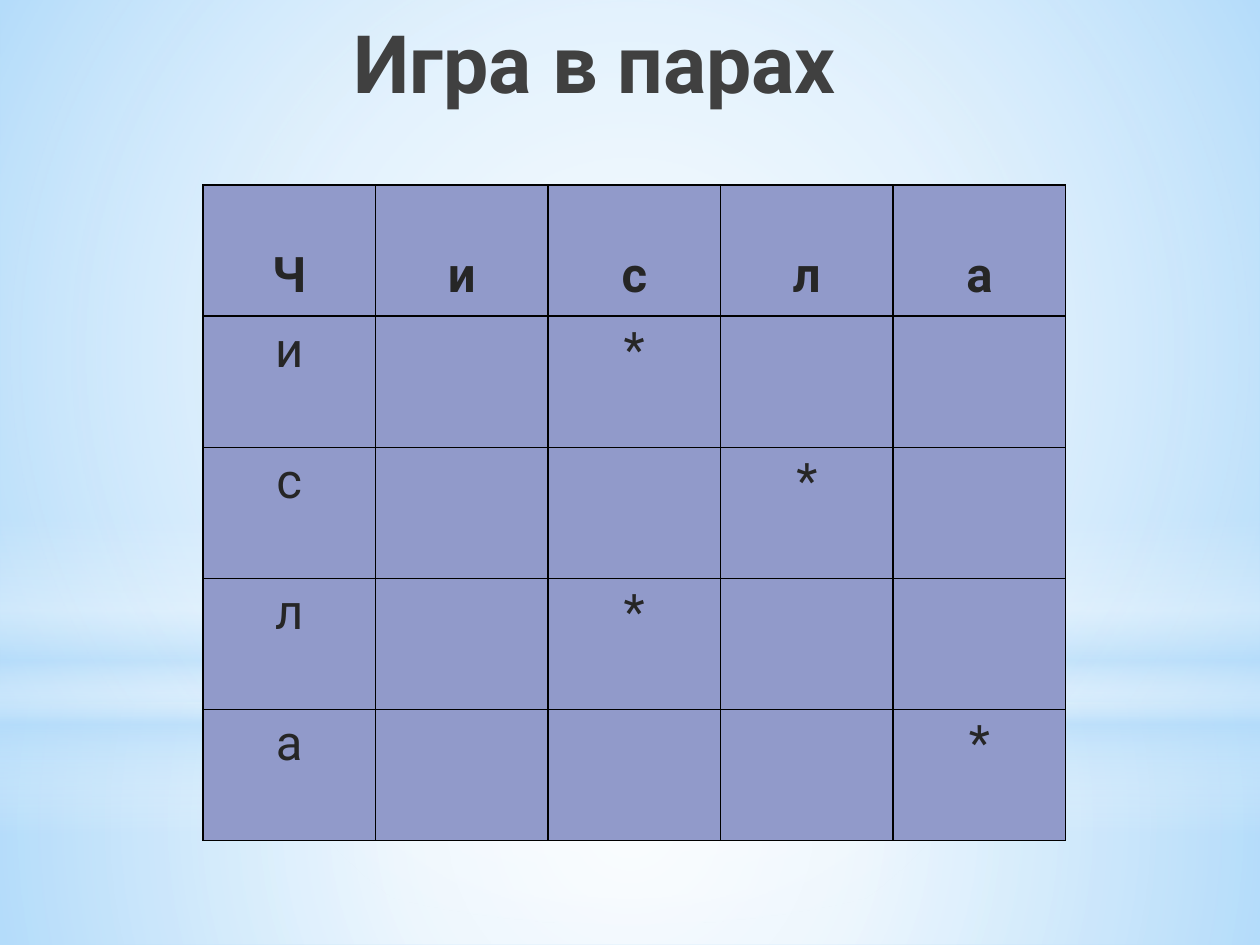
"""Build a slide with a letter grid for a game in pairs."""
from pptx import Presentation
from pptx.dml.color import RGBColor as RGB
from pptx.enum.shapes import MSO_SHAPE as Shape
from pptx.enum.text import MSO_ANCHOR as Anchor, PP_ALIGN as Align
from pptx.oxml import parse_xml
from pptx.oxml.ns import nsdecls, qn
from pptx.util import Inches, Pt

COLORS = {"sky": "B4DCFA", "white": "FFFFFF", "title": "404040",
          "text": "262626", "cell": "919ACA", "edge": "000000"}
WORD = "Числа"
STARS = {(1, 2), (2, 3), (3, 2), (4, 4)}
ROUND = ('<a:path path="circle"><a:fillToRect l="50000" t="50000" '
         'r="50000" b="50000"/></a:path>')
DOWN = '<a:lin ang="5400000" scaled="0"/>'
LAYERS = [
    (Shape.RECTANGLE, 5.58, 1.92, ROUND,
     [(0, "white", 91), (37, "white", 76), (100, "sky", 79)]),
    (Shape.RECTANGLE, 0, 5.58, ROUND,
     [(0, "white", 89), (48, "white", 62), (100, "sky", 79)]),
    (Shape.RECTANGLE, 4.12, 2.5, DOWN,
     [(0, "white", 0), (29, "white", 30), (45, "sky", 40),
      (55, "white", 26), (65, "sky", 60), (100, "white", 0)]),
    (Shape.OVAL, 1.75, 5.58, ROUND, [(0, "white", 100), (56, "white", 0)]),
]


def style(para, size, color, bold):
    para.alignment = Align.CENTER
    for run in para.runs:
        run.font.name = "Roboto"
        run.font.size = Pt(size)
        run.font.bold = bold
        run.font.color.rgb = RGB.from_string(COLORS[color])


def shade(shape, stops, kind):
    marks = "".join(
        f'<a:gs pos="{pos * 1000}"><a:srgbClr val="{COLORS[color]}">'
        f'<a:alpha val="{alpha * 1000}"/></a:srgbClr></a:gs>'
        for pos, color, alpha in stops)
    shape.fill.background()
    props = shape._element.spPr
    props.replace(props.find(qn("a:noFill")), parse_xml(
        f'<a:gradFill {nsdecls("a")} rotWithShape="1">'
        f'<a:gsLst>{marks}</a:gsLst>{kind}</a:gradFill>'))


deck = Presentation()
deck.slide_width, deck.slide_height = Inches(10), Inches(7.5)
slide = deck.slides.add_slide(deck.slide_layouts[5])
back = slide.background.fill
back.solid()
back.fore_color.rgb = RGB.from_string(COLORS["sky"])

for form, top, height, kind, stops in LAYERS:
    layer = slide.shapes.add_shape(form, 0, Inches(top), Inches(10), Inches(height))
    layer.shadow.inherit = False
    layer.line.fill.background()
    shade(layer, stops, kind)

title = slide.shapes.title
title.left, title.top = Inches(0.98), Inches(0)
title.width, title.height = Inches(7.48), Inches(1.47)
frame = title.text_frame
frame.text = "Игра в парах"
frame.vertical_anchor = Anchor.TOP
frame.margin_top = Inches(0.1)
style(frame.paragraphs[0], 46, "title", True)
slide.shapes._spTree.append(title._element)

count = len(WORD)
grid = slide.shapes.add_table(count, count, Inches(1.61), Inches(1.47),
                              Inches(6.85), Inches(5.2)).table
for row in range(count):
    for col in range(count):
        cell = grid.cell(row, col)
        cell.fill.solid()
        cell.fill.fore_color.rgb = RGB.from_string(COLORS["cell"])
        if row == 0:
            cell.vertical_anchor = Anchor.BOTTOM
            cell.margin_bottom = Inches(0.09)
            cell.text_frame.text = WORD[col]
        elif col == 0:
            cell.text_frame.text = WORD[row]
        elif (row, col) in STARS:
            cell.text_frame.text = "*"
        style(cell.text_frame.paragraphs[0], 28, "text", row == 0)
        props = cell._tc.get_or_add_tcPr()
        for spot, side in enumerate("LRTB"):
            props.insert(spot, parse_xml(
                f'<a:ln{side} {nsdecls("a")} w="{Pt(1)}"><a:solidFill>'
                f'<a:srgbClr val="{COLORS["edge"]}"/></a:solidFill></a:ln{side}>'))

deck.save("out.pptx")
